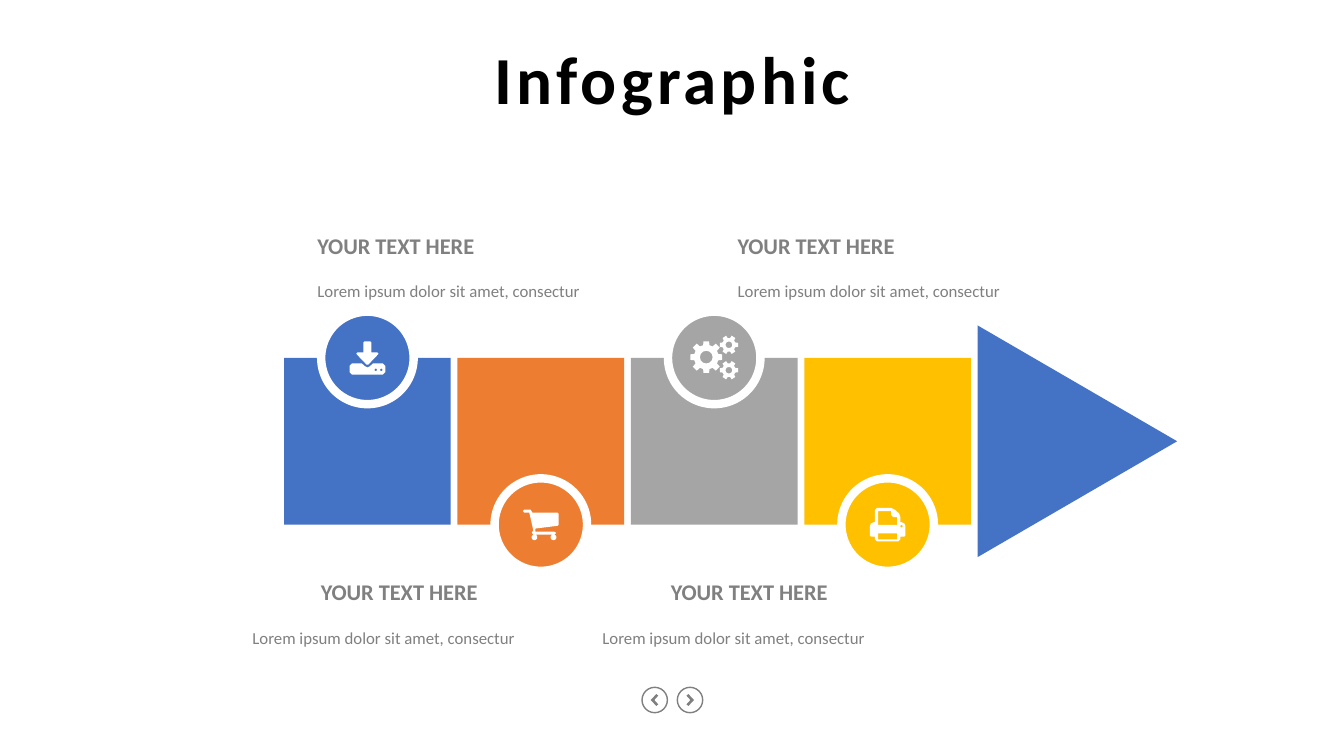
from math import cos, pi, sin

from pptx import Presentation
from pptx.dml.color import RGBColor
from pptx.enum.shapes import MSO_SHAPE
from pptx.enum.text import MSO_ANCHOR, MSO_AUTO_SIZE, PP_ALIGN
from pptx.util import Cm, Pt

BLUE = RGBColor(0x44, 0x72, 0xC4)
ORANGE = RGBColor(0xED, 0x7D, 0x31)
SILVER = RGBColor(0xA5, 0xA5, 0xA5)
GOLD = RGBColor(0xFF, 0xC0, 0x00)
GRAY = RGBColor(0x80, 0x80, 0x80)
WHITE = RGBColor(0xFF, 0xFF, 0xFF)
BLACK = RGBColor(0x00, 0x00, 0x00)


def ring(x, y, r, count=24):
    turns = [2 * pi * i / count for i in range(count)]
    return [(x + r * cos(t), y + r * sin(t)) for t in turns]


def gear(x, y, tip, root, teeth):
    pitch = 2 * pi / teeth
    edge = [(root, -0.32), (tip, -0.22), (tip, 0.22), (root, 0.32)]
    return [(x + r * cos((i + part) * pitch), y + r * sin((i + part) * pitch))
            for i in range(teeth) for r, part in edge]


LOAD = [
    [(-39, 14), (-14, 14), (-6, 21), (0, 24), (6, 21), (14, 14), (39, 14),
     (45, 20), (45, 36), (39, 42), (-39, 42), (-45, 36), (-45, 20)],
    [(-10, -39), (-7, -42), (7, -42), (10, -39), (10, -14), (25, -14),
     (28, -11), (26, -8), (2, 17), (-2, 17), (-26, -8), (-28, -11),
     (-25, -14), (-10, -14)],
    ring(21, 30, 3),
    ring(35, 30, 3),
]
CART = [
    [(45, 0), (42, 3), (-14, 10), (-14, 18), (34, 18), (39, 21), (34, 25),
     (-19, 25), (-23, 21), (-19, 14), (-29, -30), (-42, -30), (-45, -34),
     (-42, -38), (-26, -38), (-21, -30), (42, -30), (45, -27)],
    ring(-16, 32, 7),
    ring(32, 32, 7),
]
GEARS = [
    gear(-20, -2, 41, 31, 8),
    ring(-20, -2, 16),
    gear(37, -33, 24, 17, 6),
    ring(37, -33, 8),
    gear(37, 31, 24, 17, 6),
    ring(37, 31, 8),
]
PRINT = [
    [(45, 27), (42, 30), (32, 30), (32, 37), (27, 42), (-27, 42), (-32, 37),
     (-32, 30), (-42, 30), (-45, 27), (-45, 4), (-42, -3), (-35, -6),
     (-32, -6), (-32, -37), (-27, -42), (9, -42), (19, -37), (29, -28),
     (32, -19), (32, -6), (35, -6), (42, -3), (45, 4)],
    [(24, 1), (24, -19), (14, -19), (9, -24), (9, -34), (-24, -34), (-24, 1)],
    [(24, 22), (-24, 22), (-24, 37), (24, 37)],
    ring(35, 4, 3),
]
NEXT = [(-4, 15), (-9, 11), (1, 0), (-9, -11), (-4, -15), (10, 0)]


def write(frame, text, size, color, bold=False, align=PP_ALIGN.LEFT,
          lead=None, track=None, font="Calibri"):
    frame.margin_left = frame.margin_right = 0
    frame.margin_top = frame.margin_bottom = 0
    frame.word_wrap = True
    frame.auto_size = MSO_AUTO_SIZE.NONE
    frame.vertical_anchor = MSO_ANCHOR.TOP
    line = frame.paragraphs[0]
    line.alignment = align
    line.line_spacing = lead
    run = line.add_run()
    run.text = text
    run.font.name = font
    run.font.size = Pt(size)
    run.font.bold = bold
    run.font.color.rgb = color
    if track:
        run.font._element.set("spc", str(track * 100))


class Board:
    def __init__(self, deck):
        self.slide = deck.slides.add_slide(deck.slide_layouts[5])
        self.shapes = self.slide.shapes

    def paint(self, shape, fill, line=None, width=1):
        shape.shadow.inherit = False
        if fill is None:
            shape.fill.background()
        else:
            shape.fill.solid()
            shape.fill.fore_color.rgb = fill
        if line is None:
            shape.line.fill.background()
        else:
            shape.line.color.rgb = line
            shape.line.width = Pt(width)
        return shape

    def title(self, text, x, y, w, h):
        head = self.shapes.title
        head.left, head.top, head.width, head.height = Cm(x), Cm(y), Cm(w), Cm(h)
        write(head.text_frame, text, 48, BLACK, bold=True,
              align=PP_ALIGN.CENTER, track=3)

    def form(self, kind, x, y, w, h, fill, **line):
        shape = self.shapes.add_shape(
            kind, Cm(x - w / 2), Cm(y - h / 2), Cm(w), Cm(h))
        return self.paint(shape, fill, **line)

    def icon(self, x, y, loops, fill):
        first, *rest = loops
        pen = self.shapes.build_freeform(*first[0], scale=Cm(0.01))
        pen.add_line_segments(first[1:], close=True)
        for loop in rest:
            pen.move_to(*loop[0])
            pen.add_line_segments(loop[1:], close=True)
        self.paint(pen.convert_to_shape(Cm(x), Cm(y)), fill)

    def text(self, text, x, y, w, h, **look):
        box = self.shapes.add_textbox(Cm(x), Cm(y), Cm(w), Cm(h))
        write(box.text_frame, text, color=GRAY, **look)

    def label(self, x, y, align, shift=0):
        wide, short = 8.59, 5.26
        left = x
        if align == PP_ALIGN.RIGHT:
            left = x + wide - short - shift
        self.text("YOUR TEXT HERE", left, y, short, 0.69,
                  size=16, bold=True, align=align)
        self.text("Lorem ipsum dolor sit amet, consectur", x, y + 1.12,
                  wide, 0.58, size=12, align=align, lead=1.25)


def main():
    deck = Presentation()
    deck.slide_width, deck.slide_height = Cm(33.87), Cm(19.05)
    board = Board(deck)
    board.title("Infographic", 11.15, 0.94, 11.61, 2.06)

    side, pitch, start, mid = 4.2, 4.37, 9.26, 11.12
    steps = [(BLUE, LOAD), (ORANGE, CART), (SILVER, GEARS), (GOLD, PRINT)]
    for i, (color, _) in enumerate(steps):
        board.form(MSO_SHAPE.RECTANGLE, start + i * pitch, mid, side, side, color)
    tip = board.form(MSO_SHAPE.ISOSCELES_TRIANGLE, 27.15, mid, 5.84, 5.03, BLUE)
    tip.rotation = 90
    for i, (color, loops) in enumerate(steps):
        x = start + i * pitch
        y = mid + (side / 2 if i % 2 else -side / 2)
        board.form(MSO_SHAPE.OVAL, x, y, 2.33, 2.33, color, line=WHITE, width=6)
        board.icon(x, y, loops, WHITE)

    for x in (8, 18.59):
        board.label(x, 5.84, PP_ALIGN.LEFT)
    for x in (4.39, 13.21):
        board.label(x, 14.58, PP_ALIGN.RIGHT, shift=0.94)

    for x, way in ((16.5, -1), (17.39, 1)):
        board.form(MSO_SHAPE.OVAL, x, 17.64, 0.64, 0.64, None, line=GRAY)
        board.icon(x, 17.64, [[(way * dx, dy) for dx, dy in NEXT]], GRAY)

    deck.save("out.pptx")


if __name__ == "__main__":
    main()
